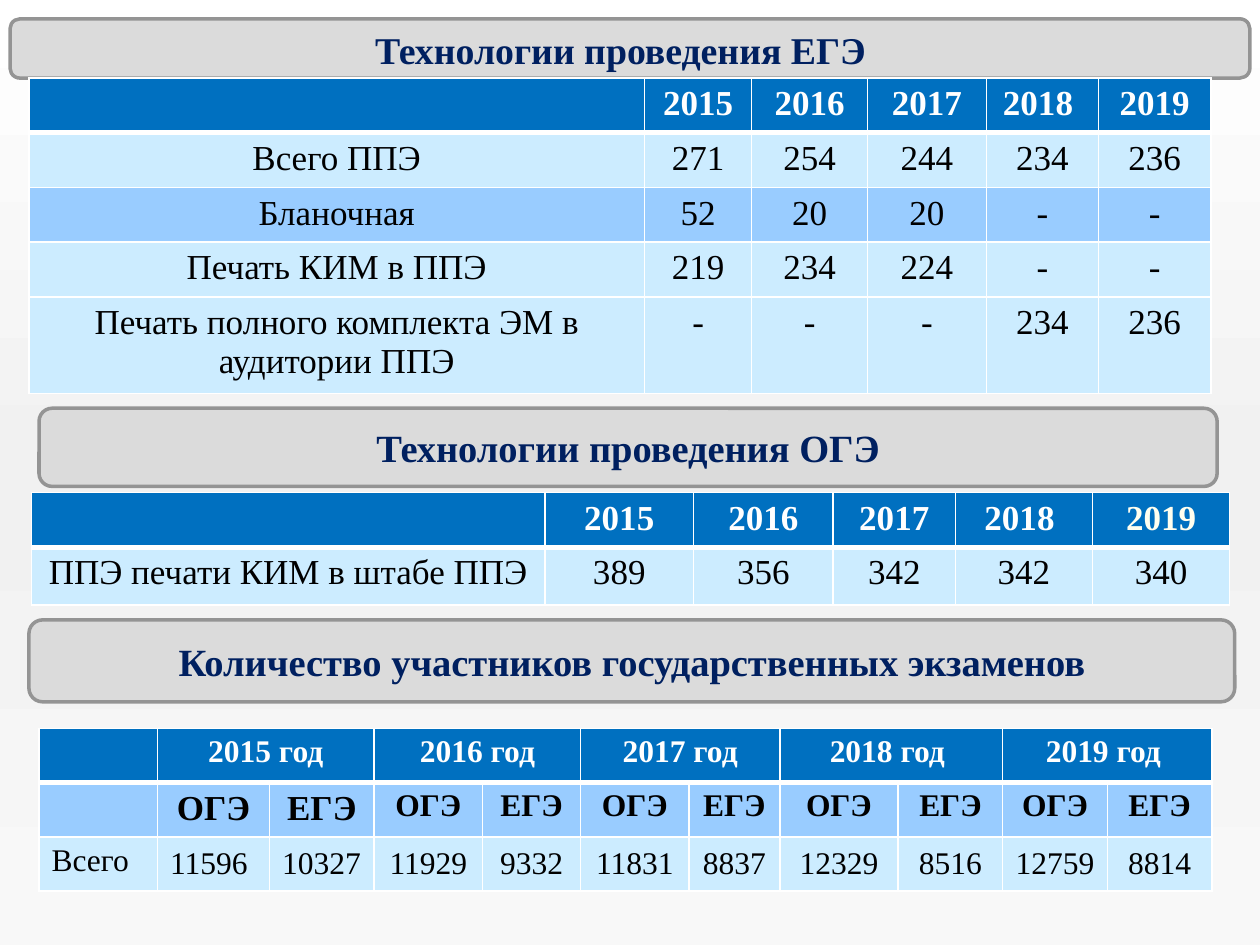
from lxml.etree import SubElement
from pptx import Presentation
from pptx.dml.color import RGBColor
from pptx.enum.shapes import MSO_SHAPE
from pptx.enum.text import MSO_ANCHOR, PP_ALIGN
from pptx.oxml.ns import qn
from pptx.util import Inches, Pt

HUES = {
    "head": "0070C0", "pale": "CCECFF", "mid": "99CCFF",
    "box": "DBDBDB", "edge": "949494", "navy": "002060",
    "white": "FFFFFF", "cream": "FFFFEF", "black": "000000",
}
FONT = "Times New Roman"
WIDE, HIGH = 10, 7.5
BACK = [(0, "FFFFFF"), (50, "F1F1F1"), (100, "F8F8F8")]
YEARS = ["2015", "2016", "2017", "2018 ", "2019"]
TERMS = ["2015 год", "2016 год", "2017 год", "2018 год ", "2019 год "]
EXAMS = ["ОГЭ", "ЕГЭ"]

TITLE = ("Технологии проведения ЕГЭ", (5.5, 2.13, 87.5, 6.27))
BOXES = {
    "ege": ("", (0.8, 2, 98.4, 6.27)),
    "count": ("Количество участников государственных экзаменов",
              (2.3, 65.6, 95.7, 8.67)),
    "oge": ("Технологии проведения ОГЭ", (3.1, 43.2, 93.5, 8.27)),
}
GRIDS = {
    "ege": {
        "at": (2.3, 8.27, 93.8),
        "cols": [4.88, 0.85, 0.92, 0.94, 0.89, 0.89],
        "rows": [5.2] * 4 + [6.53],
        "fills": ["head", "pale", "mid", "pale", "pale"],
        "data": [
            [""] + YEARS,
            ["Всего ППЭ", "271", "254", "244", "234", "236"],
            ["Бланочная", "52", "20", "20", "-", "-"],
            ["Печать КИМ в ППЭ", "219", "234", "224", "-", "-"],
            ["Печать полного комплекта ЭМ в аудитории ППЭ",
             "-", "-", "-", "234", "236"],
        ],
    },
    "count": {
        "at": (3.1, 77.07, 93.1),
        "cols": [0.94, 0.89, 0.83, 0.86, 0.78, 0.86,
                 0.72, 0.94, 0.83, 0.83, 0.83],
        "rows": [5.73] * 3,
        "fills": ["head", "mid", "pale"],
        "size": 18,
        "data": [
            [""] + [word for term in TERMS for word in (term, "")],
            [""] + EXAMS * len(TERMS),
            ["Всего", "11596", "10327", "11929", "9332", "11831",
             "8837", "12329", "8516", "12759", "8814"],
        ],
        "style": {
            (1, 1): {"size": 20}, (1, 2): {"size": 20},
            (2, 0): {"align": "LEFT", "anchor": "TOP"},
            (2, 1): {"align": "LEFT"}, (2, 2): {"align": "LEFT"},
        },
    },
    "oge": {
        "at": (2.5, 52.13, 95.1),
        "cols": [4.08, 1.18, 1.11, 0.97, 1.09, 1.09],
        "rows": [5.6, 6.13],
        "fills": ["head", "pale"],
        "data": [
            [""] + YEARS,
            ["ППЭ печати КИМ в штабе ППЭ",
             "389", "356", "342", "342", "340"],
        ],
        "style": {(0, 5): {"hue": "cream"}},
    },
}


def tint(name):
    return RGBColor.from_string(HUES[name])


def across(share):
    return Inches(WIDE * share / 100)


def down(share):
    return Inches(HIGH * share / 100)


def place(area):
    x, y, w, h = area
    return across(x), down(y), across(w), down(h)


def put(frame, text, size=22, hue="navy", bold=True, align="CENTER"):
    para = frame.paragraphs[0]
    para.alignment = PP_ALIGN[align]
    run = para.add_run()
    run.text = text
    font = run.font
    font.name, font.size, font.bold = FONT, Pt(size), bold
    font.color.rgb = tint(hue)


def flood(slide):
    fill = slide.background.fill
    fill.gradient()
    fill.gradient_angle = 270
    stops = slide.background._cSld.find(".//" + qn("a:gsLst"))
    for stop in list(stops):
        stops.remove(stop)
    for pos, shade in BACK:
        stop = SubElement(stops, qn("a:gs"), pos=str(pos * 1000))
        SubElement(stop, qn("a:srgbClr"), val=shade)


def banner(slide, text, area):
    box = slide.shapes.add_shape(MSO_SHAPE.ROUNDED_RECTANGLE, *place(area))
    box.shadow.inherit = False
    box.fill.solid()
    box.fill.fore_color.rgb = tint("box")
    box.line.color.rgb = tint("edge")
    box.line.width = Pt(2)
    if text:
        box.text_frame.vertical_anchor = MSO_ANCHOR.MIDDLE
        put(box.text_frame, text)


def title(slide, text, area):
    frame = slide.shapes.add_textbox(*place(area)).text_frame
    frame.word_wrap = True
    frame.vertical_anchor = MSO_ANCHOR.MIDDLE
    put(frame, text, size=21.6)


def border(cell, row):
    props = cell._tc.get_or_add_tcPr()
    thick = {(0, "B"), (1, "T")}
    for i, side in enumerate("LRTB"):
        width = Pt(3 if (row, side) in thick else 1)
        line = SubElement(props, qn("a:ln" + side), w=str(width))
        fill = SubElement(line, qn("a:solidFill"))
        SubElement(fill, qn("a:srgbClr"), val=HUES["white"])
        props.insert(i, line)


def grid(slide, at, cols, rows, fills, data, size=20, style=None):
    x, y, w = at
    table = slide.shapes.add_table(
        len(rows), len(cols), *place((x, y, w, sum(rows)))).table
    table.first_row = table.horz_banding = False
    for col, part in zip(table.columns, cols):
        col.width = across(w * part / sum(cols))
    for row, part in zip(table.rows, rows):
        row.height = down(part)
    paired = len(cols) > 6
    if paired:
        for c in range(1, len(cols), 2):
            table.cell(0, c).merge(table.cell(0, c + 1))
    for r, line in enumerate(data):
        for c, text in enumerate(line):
            cell = table.cell(r, c)
            cell.fill.solid()
            cell.fill.fore_color.rgb = tint(fills[r])
            border(cell, r)
            look = {"size": size, "hue": "black" if r else "white",
                    "bold": r == 0 or paired and r == 1}
            look.update((style or {}).get((r, c), {}))
            anchor = "MIDDLE" if paired and r == 2 else "TOP"
            cell.vertical_anchor = MSO_ANCHOR[look.pop("anchor", anchor)]
            if text:
                put(cell.text_frame, text, **look)


def main():
    deck = Presentation()
    deck.slide_width, deck.slide_height = Inches(WIDE), Inches(HIGH)
    slide = deck.slides.add_slide(deck.slide_layouts[6])
    flood(slide)
    banner(slide, *BOXES["ege"])
    title(slide, *TITLE)
    grid(slide, **GRIDS["ege"])
    grid(slide, **GRIDS["count"])
    banner(slide, *BOXES["count"])
    banner(slide, *BOXES["oge"])
    grid(slide, **GRIDS["oge"])
    deck.save("out.pptx")


if __name__ == "__main__":
    main()
